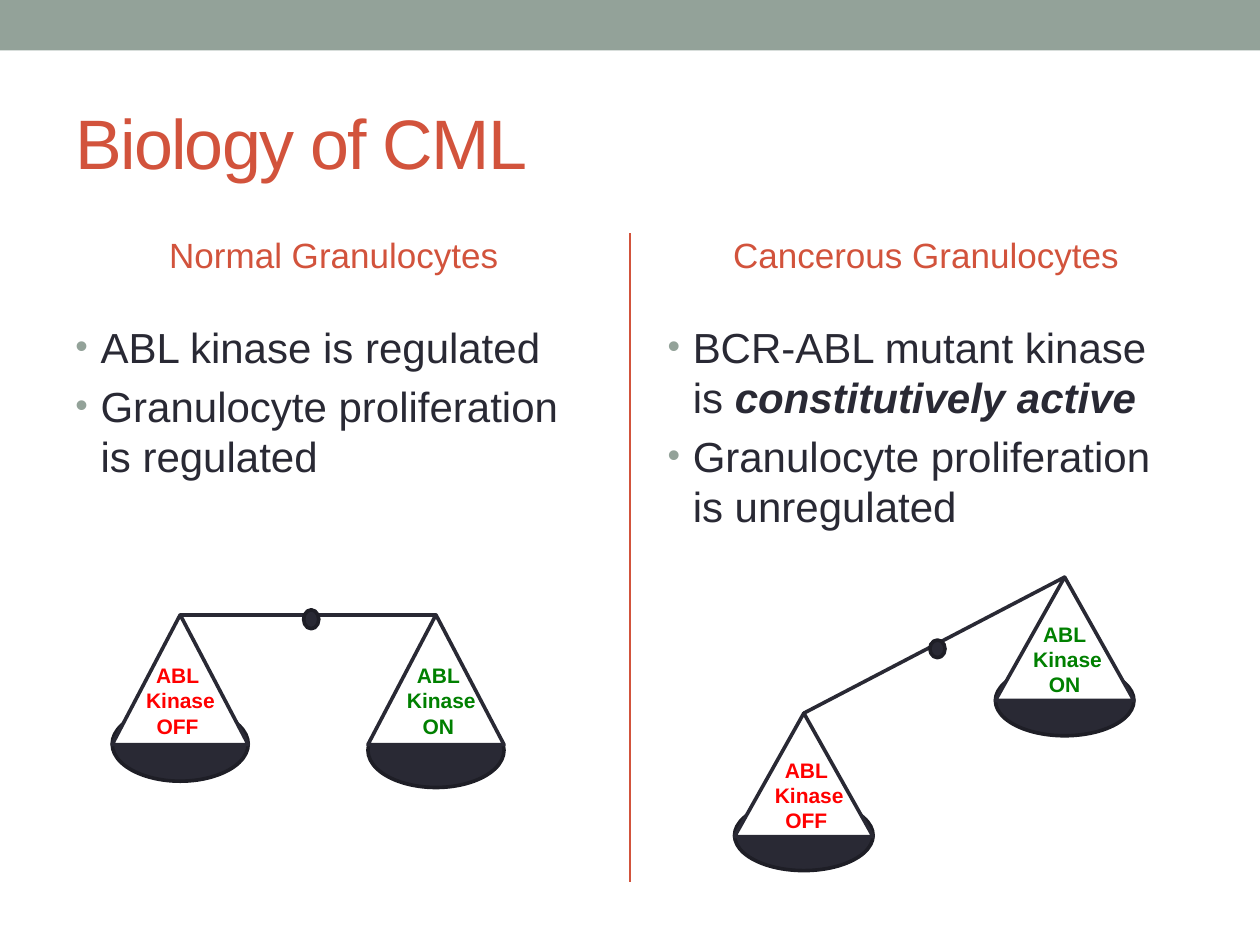
from lxml.etree import SubElement
from pptx import Presentation
from pptx.dml.color import RGBColor
from pptx.enum.shapes import MSO_CONNECTOR, MSO_SHAPE
from pptx.enum.text import MSO_ANCHOR, MSO_AUTO_SIZE, PP_ALIGN
from pptx.oxml.ns import qn
from pptx.util import Inches, Pt

SAGE, RUST, INK, EDGE, WHITE = "93A299", "D2533C", "292934", "1E1E26", "FFFFFF"
RED, GREEN = "FF0000", "008000"
BEAM_WIDTH = 2.08

TITLE = "Biology of CML"
COLUMNS = [
    (0.5, "Normal Granulocytes", [
        [("ABL kinase is regulated", False)],
        [("Granulocyte proliferation is regulated", False)],
    ]),
    (5.2, "Cancerous Granulocytes", [
        [("BCR-ABL mutant kinase is ", False), ("constitutively active", True)],
        [("Granulocyte proliferation is unregulated", False)],
    ]),
]
OFF = (["ABL", " Kinase ", "OFF"], RED)
ON = (["ABL", " Kinase ", "ON"], GREEN)
SCALES = [
    {"triangle": (1.08, 1.03), "bowl_height": 0.59, "pivot": (2.41, 4.84, 0.12, 0.15),
     "pans": [(0.89, 4.88, 5.61, (1.01, 5.21), OFF), (2.92, 4.88, 5.66, (3.08, 5.21), ON)]},
    {"triangle": (1.1, 0.98), "bowl_height": 0.56, "pivot": (7.38, 5.08, 0.12, 0.14),
     "pans": [(5.83, 5.66, 6.35, (6, 5.96), OFF), (7.9, 4.58, 5.28, (8.05, 4.88), ON)]},
]


def color(hex_string):
    return RGBColor.from_string(hex_string)


def add_solid(kind, box, fill, outline=None):
    solid = slide.shapes.add_shape(kind, *map(Inches, box))
    solid.shadow.inherit = False
    solid.fill.solid()
    solid.fill.fore_color.rgb = color(fill)
    if outline:
        solid.line.color.rgb = color(outline)
        solid.line.width = Pt(BEAM_WIDTH)
    else:
        solid.line.fill.background()
    return solid


def add_line(start, end, hex_string, width):
    line = slide.shapes.add_connector(MSO_CONNECTOR.STRAIGHT, *map(Inches, start + end))
    line.line.color.rgb = color(hex_string)
    line.line.width = Pt(width)
    SubElement(line._element.spPr, qn("a:effectLst"))
    return line


def add_text(box, paragraphs, size, hex_string, align=PP_ALIGN.LEFT,
             anchor=MSO_ANCHOR.TOP, bold=False, space=0):
    frame = slide.shapes.add_textbox(*map(Inches, box)).text_frame
    frame.word_wrap = True
    frame.vertical_anchor = anchor
    for index, pieces in enumerate(paragraphs):
        paragraph = frame.add_paragraph() if index else frame.paragraphs[0]
        paragraph.alignment = align
        paragraph.space_before = Pt(space)
        for words, emphasis in pieces:
            run = paragraph.add_run()
            run.text = words
            run.font.name = "Arial"
            run.font.size = Pt(size)
            run.font.bold = bold or emphasis
            run.font.italic = emphasis
            run.font.color.rgb = color(hex_string)
    return frame


def add_bullets(frame):
    for paragraph in frame.paragraphs:
        properties = paragraph._p.get_or_add_pPr()
        properties.set("marL", str(Inches(0.2)))
        properties.set("indent", str(-Inches(0.2)))
        bullet_color = SubElement(properties, qn("a:buClr"))
        SubElement(bullet_color, qn("a:srgbClr"), val=SAGE)
        SubElement(properties, qn("a:buSzPct"), val="85000")
        SubElement(properties, qn("a:buFont"), typeface="Arial")
        SubElement(properties, qn("a:buChar"), char="•")


def add_scale(scale):
    width, height = scale["triangle"]
    pans = scale["pans"]
    for left, _, bowl_top, _, _ in reversed(pans):
        add_solid(MSO_SHAPE.OVAL, (left, bowl_top, width, scale["bowl_height"]), INK, EDGE)
    hangers = [add_solid(MSO_SHAPE.ISOSCELES_TRIANGLE, (left, top, width, height), WHITE, INK)
               for left, top, *_ in pans]
    apexes = [(left + width / 2, top) for left, top, *_ in pans]
    beam = add_line(*apexes, INK, BEAM_WIDTH)
    beam.begin_connect(hangers[0], 0)
    beam.end_connect(hangers[1], 0)
    add_solid(MSO_SHAPE.OVAL, scale["pivot"], INK, EDGE)
    for *_, corner, (lines, hex_string) in pans:
        label = add_text(corner + (0.8, 0.71), [[(words, False)] for words in lines],
                         12, hex_string, PP_ALIGN.CENTER, bold=True)
        label.word_wrap = False
        label.auto_size = MSO_AUTO_SIZE.SHAPE_TO_FIT_TEXT


presentation = Presentation()
presentation.slide_width, presentation.slide_height = Inches(10), Inches(7.5)
slide = presentation.slides.add_slide(presentation.slide_layouts[6])

add_solid(MSO_SHAPE.RECTANGLE, (0, 0, 10, 0.4), SAGE)
add_line((5, 1.85), (5, 7), RUST, 1.5)
title = add_text((0.5, 0.58, 9, 1.08), [[(TITLE, False)]], 40, RUST, anchor=MSO_ANCHOR.MIDDLE)
title.paragraphs[0].runs[0].font._element.set("spc", "-100")

for left, heading, points in COLUMNS:
    add_text((left, 1.67, 4.3, 0.7), [[(heading, False)]], 20, RUST,
             PP_ALIGN.CENTER, MSO_ANCHOR.MIDDLE, space=4)
    add_bullets(add_text((left, 2.5, 4.3, 4.32), points, 24, INK, space=4.8))

for scale in SCALES:
    add_scale(scale)

presentation.save("out.pptx")
